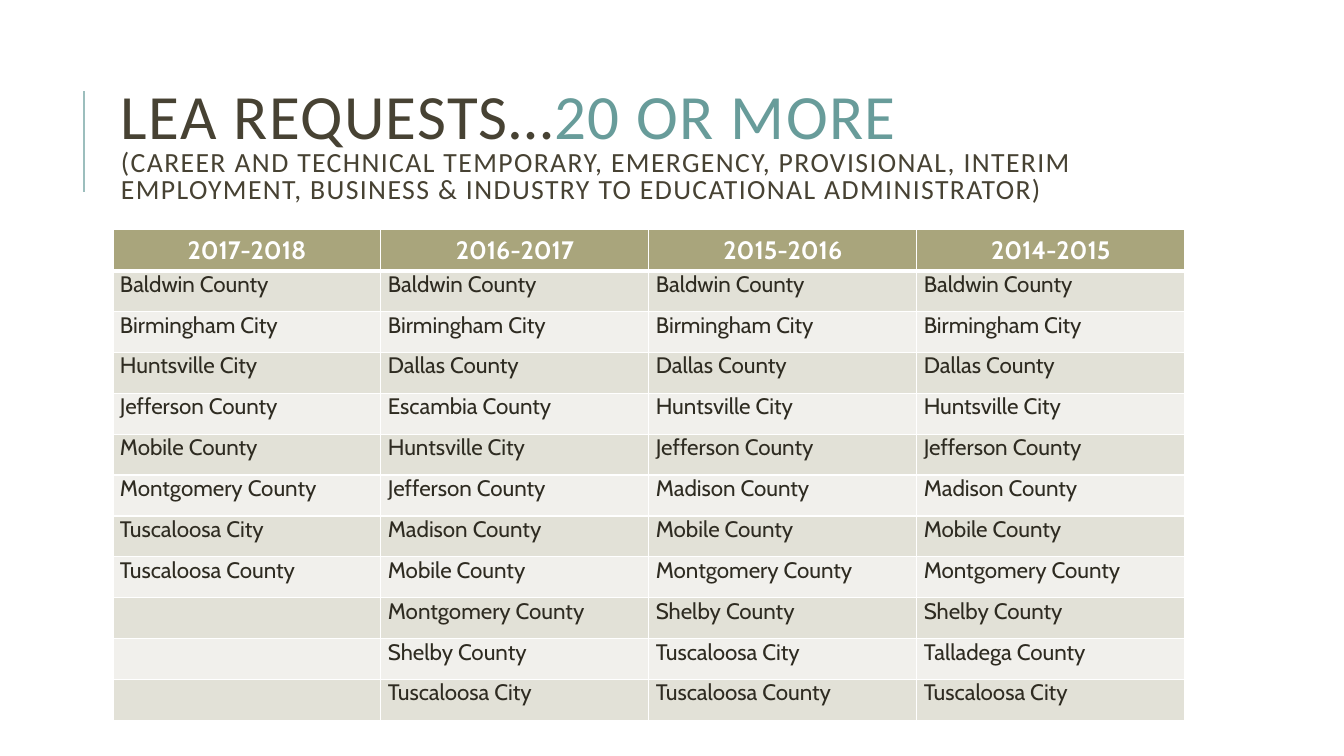
from dataclasses import dataclass
from itertools import zip_longest

from lxml.etree import SubElement
from pptx import Presentation
from pptx.dml.color import RGBColor
from pptx.enum.shapes import MSO_CONNECTOR
from pptx.enum.text import MSO_ANCHOR, PP_ALIGN
from pptx.oxml.ns import qn
from pptx.util import Inches, Pt


@dataclass(frozen=True)
class Theme:
    heading_font: str = "Calibri"
    body_font: str = "Cabin"
    dark: str = "474233"
    teal: str = "689C9A"
    pale_teal: str = "9CBEBD"
    body: str = "2E2B21"
    white: str = "FFFFFF"
    header_fill: str = "A9A57C"
    bands: tuple = ("E2E1D7", "F1F0EC")
    title_size: float = 45
    subtitle_size: float = 19.8
    header_size: float = 18
    body_size: float = 16


THEME = Theme()

REQUESTS = {
    "2017-2018": [
        "Baldwin County", "Birmingham City", "Huntsville City",
        "Jefferson County", "Mobile County", "Montgomery County",
        "Tuscaloosa City", "Tuscaloosa County",
    ],
    "2016-2017": [
        "Baldwin County", "Birmingham City", "Dallas County",
        "Escambia County", "Huntsville City", "Jefferson County",
        "Madison County", "Mobile County", "Montgomery County",
        "Shelby County", "Tuscaloosa City",
    ],
    "2015-2016": [
        "Baldwin County", "Birmingham City", "Dallas County",
        "Huntsville City", "Jefferson County", "Madison County",
        "Mobile County", "Montgomery County", "Shelby County",
        "Tuscaloosa City", "Tuscaloosa County",
    ],
    "2014-2015": [
        "Baldwin County", "Birmingham City", "Dallas County",
        "Huntsville City", "Jefferson County", "Madison County",
        "Mobile County", "Montgomery County", "Shelby County",
        "Talladega County", "Tuscaloosa City",
    ],
}


def add_text(paragraph, text, *, size, color, font, bold=False, spacing=0):
    """Append a formatted run; spacing is the tracking in points."""
    run = paragraph.add_run()
    run.text = text
    run.font.size = Pt(size)
    run.font.name = font
    run.font.bold = bold
    run.font.color.rgb = RGBColor.from_string(color)
    if spacing:
        run.font._element.set("spc", str(round(spacing * 100)))


def add_accent_line(slide):
    accent = slide.shapes.add_connector(
        MSO_CONNECTOR.STRAIGHT, Inches(0.83), Inches(1.9), Inches(0.83), Inches(0.9))
    accent.line.color.rgb = RGBColor.from_string(THEME.pale_teal)
    accent.line.width = Pt(1.5)
    SubElement(accent._element.spPr, qn("a:effectLst"))


def add_heading(slide):
    frame = slide.shapes.add_textbox(
        Inches(1.12), Inches(0.9), Inches(10.63), Inches(1.15)).text_frame
    frame.word_wrap = True
    frame.vertical_anchor = MSO_ANCHOR.TOP
    frame.margin_left = frame.margin_right = Inches(0.08)
    frame.margin_top = frame.margin_bottom = 0
    heading = frame.paragraphs[0]
    heading.line_spacing = 0.8
    style = {"font": THEME.heading_font, "spacing": 1}
    add_text(heading, "LEA REQUESTS…", size=THEME.title_size, color=THEME.dark, **style)
    add_text(heading, "20 OR MORE", size=THEME.title_size, color=THEME.teal, **style)
    heading.add_line_break()
    add_text(
        heading,
        "(CAREER AND TECHNICAL TEMPORARY, EMERGENCY, PROVISIONAL, INTERIM "
        "EMPLOYMENT, BUSINESS & INDUSTRY TO EDUCATIONAL ADMINISTRATOR)",
        size=THEME.subtitle_size, color=THEME.dark, **style)


def set_borders(cell, top=1, bottom=1):
    """Draw white borders; widths are in points."""
    properties = cell._tc.get_or_add_tcPr()
    for side, width in (("L", 1), ("R", 1), ("T", top), ("B", bottom)):
        border = SubElement(properties, qn(f"a:ln{side}"), w=str(Pt(width)))
        fill = SubElement(border, qn("a:solidFill"))
        SubElement(fill, qn("a:srgbClr"), val=THEME.white)


def fill_cell(cell, color):
    cell.fill.solid()
    cell.fill.fore_color.rgb = RGBColor.from_string(color)


def format_header(cell, year):
    set_borders(cell, bottom=3)
    fill_cell(cell, THEME.header_fill)
    label = cell.text_frame.paragraphs[0]
    label.alignment = PP_ALIGN.CENTER
    add_text(label, year, size=THEME.header_size, color=THEME.white,
             font=THEME.body_font, bold=True)


def format_body(cell, district, row):
    set_borders(cell, top=3 if row == 1 else 1)
    fill_cell(cell, THEME.bands[(row - 1) % 2])
    cell.margin_left = cell.margin_right = Inches(0.07)
    cell.margin_top = cell.margin_bottom = 0
    if district:
        add_text(cell.text_frame.paragraphs[0], district, size=THEME.body_size,
                 color=THEME.body, font=THEME.body_font)


def add_requests_table(slide):
    district_rows = list(zip_longest(*REQUESTS.values()))
    table = slide.shapes.add_table(
        len(district_rows) + 1, len(REQUESTS),
        Inches(1.12), Inches(2.28), Inches(10.63), Inches(4.87)).table
    for column, year in enumerate(REQUESTS):
        format_header(table.cell(0, column), year)
    for row, districts in enumerate(district_rows, start=1):
        for column, district in enumerate(districts):
            format_body(table.cell(row, column), district, row)


def main():
    presentation = Presentation()
    presentation.slide_width = Inches(13.33)
    presentation.slide_height = Inches(7.5)
    slide = presentation.slides.add_slide(presentation.slide_layouts[6])
    add_accent_line(slide)
    add_heading(slide)
    add_requests_table(slide)
    presentation.save("out.pptx")


if __name__ == "__main__":
    main()
